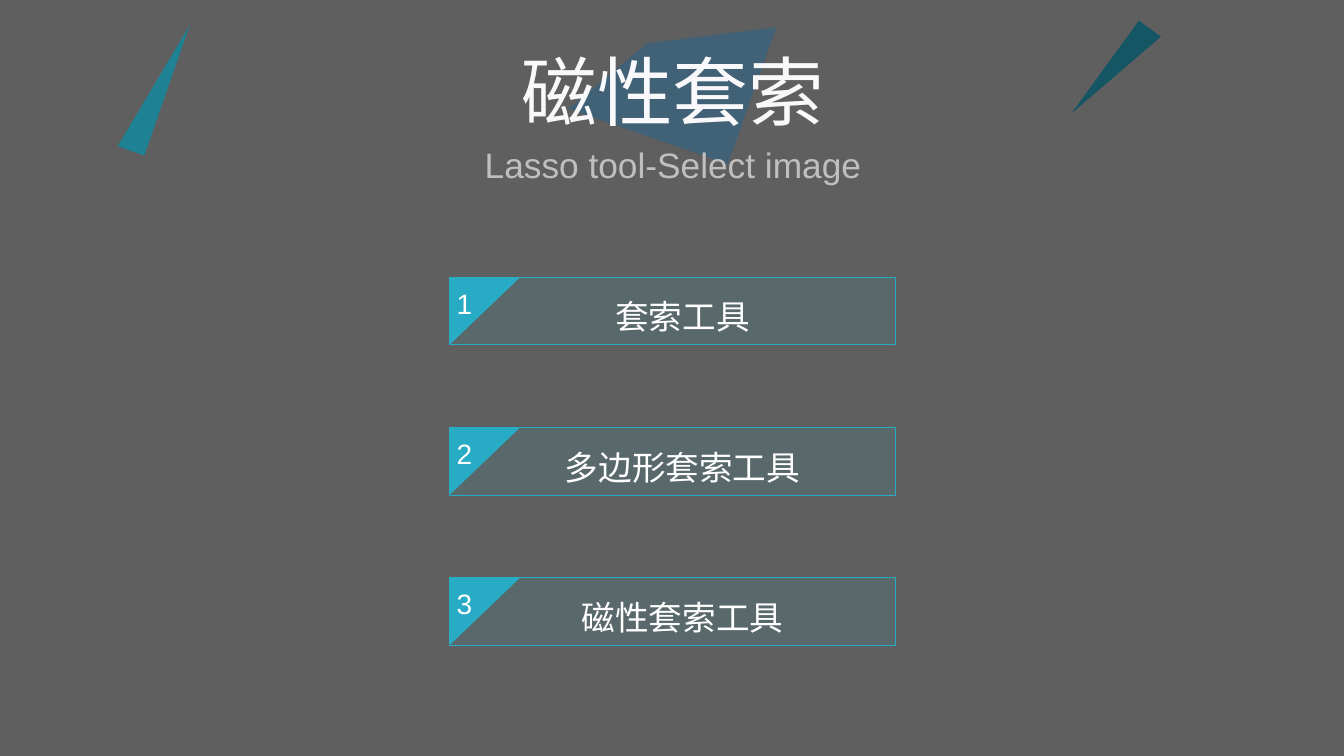
from dataclasses import dataclass

from lxml import etree
from pptx import Presentation
from pptx.dml.color import RGBColor
from pptx.enum.shapes import MSO_SHAPE
from pptx.enum.text import MSO_ANCHOR, PP_ALIGN
from pptx.oxml.ns import qn
from pptx.util import Inches, Pt

RECTANGLE, RIGHT_TRIANGLE = MSO_SHAPE.RECTANGLE, MSO_SHAPE.RIGHT_TRIANGLE
TOP, MIDDLE = MSO_ANCHOR.TOP, MSO_ANCHOR.MIDDLE
LEFT, CENTER = PP_ALIGN.LEFT, PP_ALIGN.CENTER


@dataclass(frozen=True)
class Theme:
    font: str = "Arial"
    background: str = "5F5F5F"
    accent: str = "28ACC6"
    teal: str = "1E8194"
    dark_teal: str = "145663"
    blue: str = "416177"
    white: str = "FFFFFF"
    title: str = "F9F9FB"
    subtitle: str = "BFBFBF"
    title_size: float = 54
    subtitle_size: float = 25.2
    label_size: float = 24
    number_size: float = 20


THEME = Theme()
PAGE_WIDTH, PAGE_HEIGHT = 13.33, 7.5

# Menu grid: one column, evenly spaced rows
MENU_LEFT, MENU_TOP, ROW_STEP = 4.46, 2.75, 1.49
BAR_WIDTH, BAR_HEIGHT, CORNER_WIDTH = 4.42, 0.67, 0.7
TOOLS = ["套索工具", "多边形套索工具", "磁性套索工具"]


def paint(shape, color, opacity=None):
    """Flat fill without outline or shadow."""
    shape.shadow.inherit = False
    shape.fill.solid()
    shape.fill.fore_color.rgb = RGBColor.from_string(color)
    shape.line.fill.background()
    if opacity is not None:
        tint = shape.fill._xPr.find(".//" + qn("a:srgbClr"))
        etree.SubElement(tint, qn("a:alpha")).set("val", str(opacity * 1000))


def write(shape, text, size, color, align=CENTER, anchor=MIDDLE,
          margins=(0, 0, 0, 0), spacing=None):
    frame = shape.text_frame
    frame.word_wrap = True
    frame.vertical_anchor = anchor
    (frame.margin_left, frame.margin_top,
     frame.margin_right, frame.margin_bottom) = map(Inches, margins)
    para = frame.paragraphs[0]
    para.alignment = align
    if spacing:
        para.line_spacing = spacing
    span = para.add_run()
    span.text = text
    span.font.name = THEME.font
    span.font.size = Pt(size)
    span.font.color.rgb = RGBColor.from_string(color)


def add_preset(page, kind, bounds, color, rotation=0, opacity=None):
    shape = page.shapes.add_shape(kind, *map(Inches, bounds))
    shape.rotation = rotation
    paint(shape, color, opacity)
    return shape


def add_polygon(page, points, color):
    start, *rest = [(Inches(x), Inches(y)) for x, y in points]
    builder = page.shapes.build_freeform(*start)
    builder.add_line_segments(rest, close=True)
    shape = builder.convert_to_shape()
    paint(shape, color)
    return shape


def add_centered_text(page, top, width, height, text, size, color, **options):
    bounds = ((PAGE_WIDTH - width) / 2 + 0.01, top, width, height)
    box = page.shapes.add_textbox(*map(Inches, bounds))
    write(box, text, size, color, **options)


def add_menu_row(page, index, label):
    top = MENU_TOP + index * ROW_STEP
    bar = add_preset(page, RECTANGLE, (MENU_LEFT, top, BAR_WIDTH, BAR_HEIGHT),
                     THEME.accent, opacity=12)
    bar.line.color.rgb = RGBColor.from_string(THEME.accent)
    bar.line.width = Pt(0.25)
    write(bar, label, THEME.label_size, THEME.white,
          margins=(0.2, 0, 0, 0.01), spacing=1.3)

    corner = add_polygon(page, [(MENU_LEFT, top),
                                (MENU_LEFT + CORNER_WIDTH, top),
                                (MENU_LEFT, top + BAR_HEIGHT)], THEME.accent)
    write(corner, str(index + 1), THEME.number_size, THEME.white,
          align=LEFT, margins=(0.07, 0, 0, 0.15))


def main():
    deck = Presentation()
    deck.slide_width, deck.slide_height = Inches(PAGE_WIDTH), Inches(PAGE_HEIGHT)
    page = deck.slides.add_slide(deck.slide_layouts[6])
    page.background.fill.solid()
    page.background.fill.fore_color.rgb = RGBColor.from_string(THEME.background)

    # Decorative shards
    add_preset(page, RIGHT_TRIANGLE, (0.84, 0.71, 1.37, 0.28), THEME.teal, 289.2)
    add_preset(page, RIGHT_TRIANGLE, (10.5, 0.61, 1.14, 0.27), THEME.dark_teal, 126)
    add_polygon(page, [(6.42, 0.43), (7.7, 0.27), (7.22, 1.63), (5.64, 1.08)],
                THEME.blue)

    # Numbered tools
    for index, label in enumerate(TOOLS):
        add_menu_row(page, index, label)

    # Heading
    add_centered_text(page, 0.46, 3.13, 0.87, "磁性套索",
                      THEME.title_size, THEME.title)
    add_centered_text(page, 1.37, 4.14, 0.68, "Lasso tool-Select image",
                      THEME.subtitle_size, THEME.subtitle,
                      anchor=TOP, margins=(0.1, 0.05, 0.1, 0.05))

    deck.save("out.pptx")


if __name__ == "__main__":
    main()
